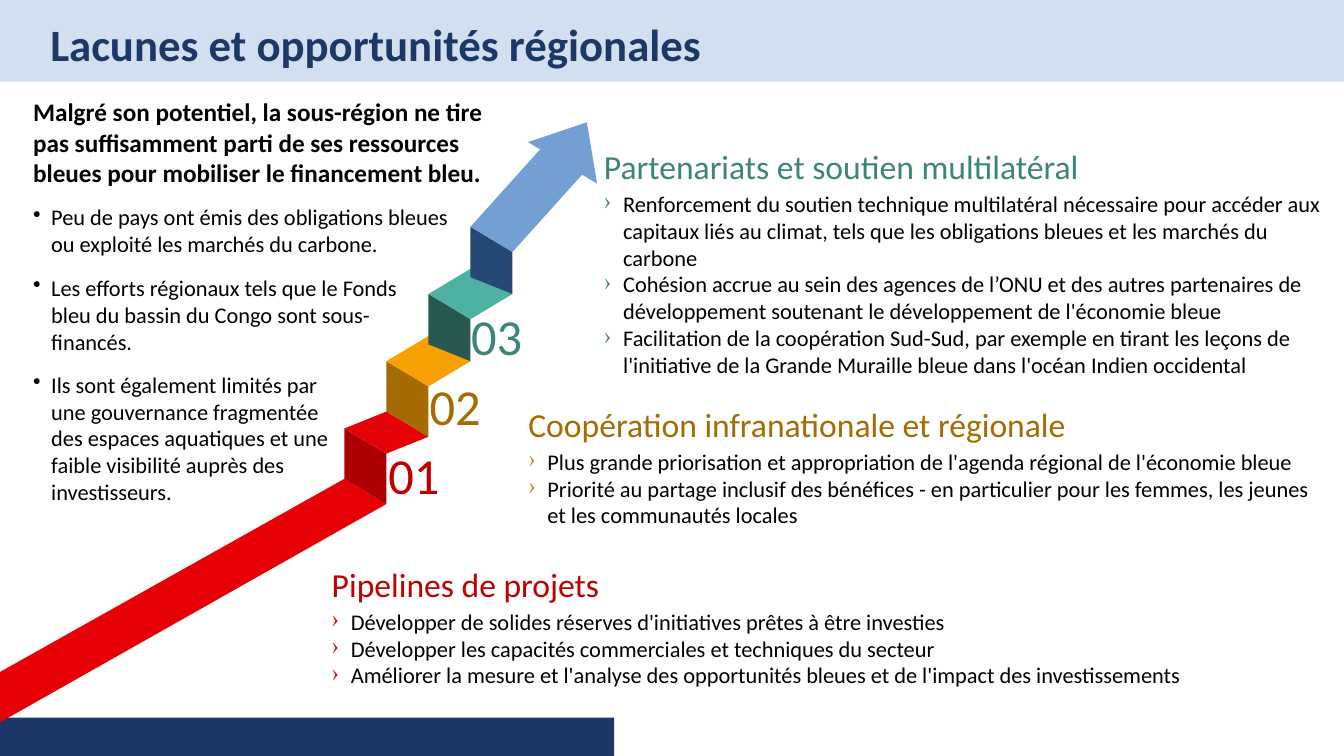
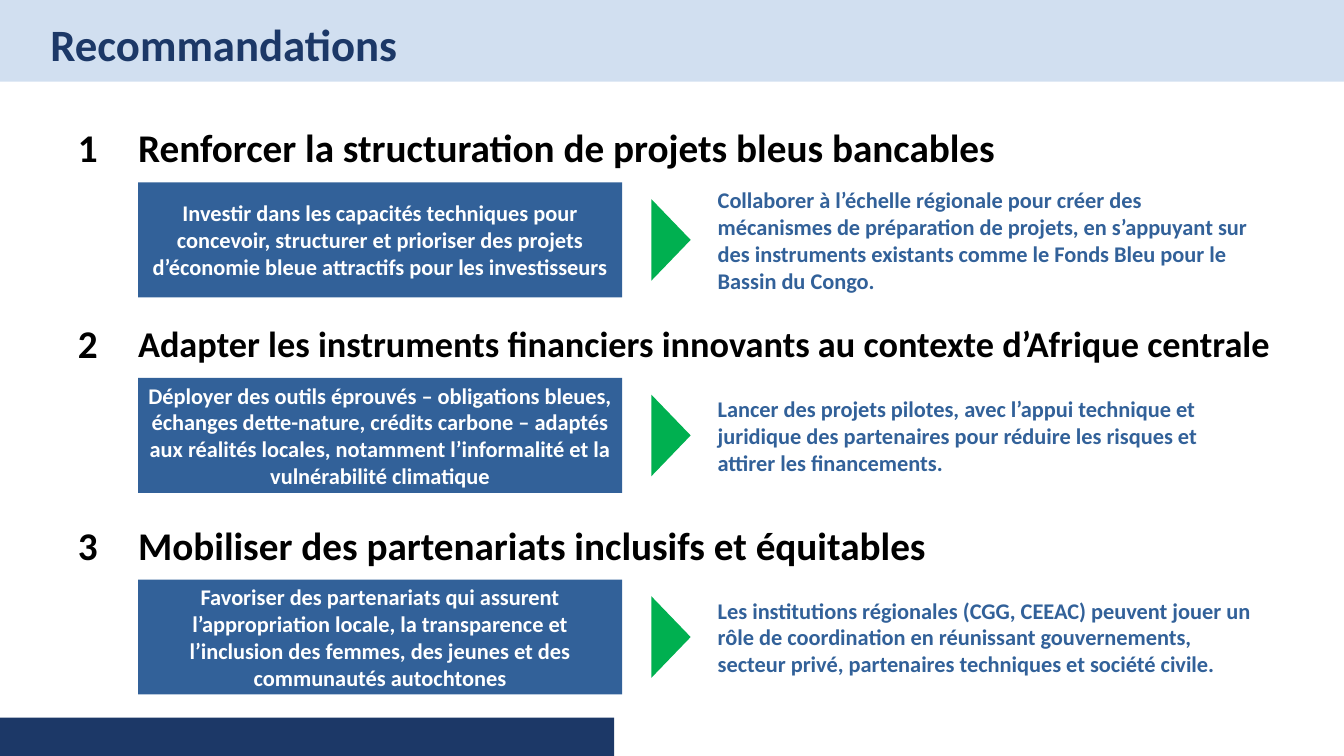
"""Build two slides on regional gaps, opportunities and recommendations for blue finance."""
from dataclasses import dataclass, replace

from lxml import etree
from pptx import Presentation
from pptx import util as u
from pptx.dml import color as dml
from pptx.dml import fill as fills
from pptx.enum import shapes, text
from pptx.oxml import ns
from pptx.shapes import autoshape
from pptx.slide import Slide
from pptx.text import text as tx

Point = tuple[float, float]
Box = tuple[float, float, float, float]

COLUMNS, ROWS = 160, 90
WIDTH, HEIGHT = u.Inches(13.33), u.Inches(7.5)
CELL = HEIGHT / ROWS
FONT = "Calibri"
NAVY, PALE, BLACK, WHITE = "1C3867", "D1DFF0", "000000", "FFFFFF"
RED, BRICK, SKY, DEEP_BLUE = "E60106", "C00000", "749FD2", "254973"
OCHRE, TEAL, BLUE, GREEN = "A66B03", "3B8579", "326199", "00B050"
STEP_RISE: Point = (4.92, -8.28)
FIRST_STEP: Point = (41.04, 51.48)
SIDE_FACE: list[Point] = [(0, 0), (4.92, 2.88), (4.92, 8.52), (-0.12, 5.88)]
TOP_FACE: list[Point] = [(0, 0), (5.04, -2.88), (9.84, 0.12), (4.92, 3)]


@dataclass(frozen=True)
class Style:
    """How a block of text looks."""
    size: float
    color: str = BLACK
    bold: bool = False
    centred: bool = False
    middle: bool = True
    inset: bool = False
    spacing: float = 1.0
    bullet: str = ""
    bullet_color: str = BLACK
    indent: float = 0.18


@dataclass(frozen=True)
class Step:
    """One numbered step of the staircase."""
    number: str
    side: str
    top: str
    ink: str


@dataclass(frozen=True)
class Topic:
    """A coloured heading with its list of opportunities."""
    left: float
    top: float
    width: float
    list_rows: float
    ink: str
    bullet_color: str
    heading: str
    points: list[str]


@dataclass(frozen=True)
class Gap:
    """A regional gap, listed beside the staircase."""
    top: float
    width: float
    rows: float
    wording: str


@dataclass(frozen=True)
class Recommendation:
    """A numbered recommendation, its action and the way to reach it."""
    top: float
    heading: str
    action: str
    means: str
    heading_size: float = 28


TITLE = Style(32, NAVY, bold=True, inset=True, spacing=0.9)
TOPIC_LIST = Style(16, middle=False, bullet="›", indent=0.19)
INTRO = Style(18, bold=True, middle=False, inset=True)
GAP = Style(16, middle=False, inset=True, bullet="•")
HEADING = Style(28, bold=True, spacing=0.9)
ACTION = Style(16, WHITE, bold=True, centred=True, inset=True)
MEANS = Style(16, BLUE, bold=True, inset=True)

STEPS = [
    Step("01", "AD0105", RED, BRICK),
    Step("02", OCHRE, "F8A104", OCHRE),
    Step("03", "275951", "4FB1A1", TEAL),
]
TOPICS = [
    Topic(39.48, 66.6, 111.72, 10.8, BRICK, RED, "Pipelines de projets", [
        "Développer de solides réserves d'initiatives prêtes à être investies",
        "Développer les capacités commerciales et techniques du secteur",
        "Améliorer la mesure et l'analyse des opportunités bleues et de l'impact des investissements",
    ]),
    Topic(62.88, 47.55, 93.12, 10.8, OCHRE, "CD8503", "Coopération infranationale et régionale", [
        "Plus grande priorisation et appropriation de l'agenda régional de l'économie bleue",
        "Priorité au partage inclusif des bénéfices - en particulier pour les femmes, les jeunes "
        "et les communautés locales",
    ]),
    Topic(71.88, 16.86, 85.44, 21.36, TEAL, TEAL, "Partenariats et soutien multilatéral", [
        "Renforcement du soutien technique multilatéral nécessaire pour accéder aux capitaux liés "
        "au climat, tels que les obligations bleues et les marchés du carbone",
        "Cohésion accrue au sein des agences de l’ONU et des autres partenaires de développement "
        "soutenant le développement de l'économie bleue",
        "Facilitation de la coopération Sud-Sud, par exemple en tirant les leçons de l'initiative "
        "de la Grande Muraille bleue dans l'océan Indien occidental",
    ]),
]
GAPS = [
    Gap(23.64, 54.48, 7.68, "Peu de pays ont émis des obligations bleues ou exploité les marchés du carbone."),
    Gap(32.04, 47.76, 10.92, "Les efforts régionaux tels que le Fonds bleu du bassin du Congo sont sous-financés."),
    Gap(43.56, 39.84, 17.4, "Ils sont également limités par une gouvernance fragmentée des espaces aquatiques "
        "et une faible visibilité auprès des investisseurs."),
]
RECOMMENDATIONS = [
    Recommendation(
        14.04, "Renforcer la structuration de projets bleus bancables",
        "Investir dans les capacités techniques pour concevoir, structurer et prioriser des projets "
        "d’économie bleue attractifs pour les investisseurs",
        "Collaborer à l’échelle régionale pour créer des mécanismes de préparation de projets, en "
        "s’appuyant sur des instruments existants comme le Fonds Bleu pour le Bassin du Congo."),
    Recommendation(
        37.32, "Adapter les instruments financiers innovants au contexte d’Afrique centrale",
        "Déployer des outils éprouvés – obligations bleues, échanges dette-nature, crédits carbone – "
        "adaptés aux réalités locales, notamment l’informalité et la vulnérabilité climatique",
        "Lancer des projets pilotes, avec l’appui technique et juridique des partenaires pour réduire "
        "les risques et attirer les financements.", 25.9),
    Recommendation(
        61.32, "Mobiliser des partenariats inclusifs et équitables",
        "Favoriser des partenariats qui assurent l’appropriation locale, la transparence et "
        "l’inclusion des femmes, des jeunes et des communautés autochtones",
        "Les institutions régionales (CGG, CEEAC) peuvent jouer un rôle de coordination en réunissant "
        "gouvernements, secteur privé, partenaires techniques et société civile."),
]


def paint(fill: fills.FillFormat, color: str) -> None:
    """Fill with a solid hex colour."""
    fill.solid()
    fill.fore_color.rgb = dml.RGBColor.from_string(color)


def cells(box: Box) -> list[u.Emu]:
    """Turn grid columns and rows into lengths."""
    return [u.Emu(round(length * CELL)) for length in box]


def add_bullet(paragraph: tx._Paragraph, style: Style) -> None:
    """Give a paragraph a coloured bullet and a hanging indent."""
    properties = paragraph._p.get_or_add_pPr()
    indent = u.Inches(style.indent)
    properties.set("marL", str(indent))
    properties.set("indent", str(-indent))
    tint = etree.SubElement(properties, ns.qn("a:buClr"))
    etree.SubElement(tint, ns.qn("a:srgbClr"), val=style.bullet_color)
    etree.SubElement(properties, ns.qn("a:buChar"), char=style.bullet)


def write(frame: tx.TextFrame, lines: list[str], style: Style) -> None:
    """Write one paragraph per line in the given style."""
    frame.word_wrap = True
    frame.vertical_anchor = text.MSO_ANCHOR.MIDDLE if style.middle else text.MSO_ANCHOR.TOP
    frame.margin_left = frame.margin_right = u.Inches(0.1 if style.inset else 0)
    frame.margin_top = frame.margin_bottom = u.Inches(0.05 if style.inset else 0)
    for index, line in enumerate(lines):
        paragraph = frame.add_paragraph() if index else frame.paragraphs[0]
        paragraph.text = line
        paragraph.alignment = text.PP_ALIGN.CENTER if style.centred else text.PP_ALIGN.LEFT
        paragraph.line_spacing = style.spacing
        if style.bullet:
            add_bullet(paragraph, style)
        font = paragraph.font
        font.name, font.size, font.bold = FONT, u.Pt(style.size), style.bold
        paint(font.fill, style.color)


def add_text(slide: Slide, box: Box, lines: list[str], style: Style) -> None:
    """Place a text box on the grid."""
    write(slide.shapes.add_textbox(*cells(box)).text_frame, lines, style)


def finish(shape: autoshape.Shape, color: str) -> None:
    """Make a shape flat, plain and without outline."""
    shape.shadow.inherit = False
    shape.line.fill.background()
    paint(shape.fill, color)


def add_solid(slide: Slide, box: Box, color: str, rotation: float = 0,
              kind: shapes.MSO_SHAPE = shapes.MSO_SHAPE.RECTANGLE) -> autoshape.Shape:
    """Place a flat preset shape on the grid."""
    shape = slide.shapes.add_shape(kind, *cells(box))
    shape.rotation = rotation
    finish(shape, color)
    return shape


def add_face(slide: Slide, corners: list[Point], color: str, origin: Point = (0, 0)) -> None:
    """Draw a closed polygon whose corners are offsets from an origin."""
    start, *rest = [(origin[0] + x, origin[1] + y) for x, y in corners]
    outline = slide.shapes.build_freeform(*start, scale=CELL)
    outline.add_line_segments(rest, close=True)
    finish(outline.convert_to_shape(), color)


def add_page(deck: Presentation, title: str) -> Slide:
    """Add a slide with the shared bands and title."""
    slide = deck.slides.add_slide(deck.slide_layouts[6])
    add_solid(slide, (0, 0, COLUMNS, 9.72), PALE)
    add_solid(slide, (0, 85.44, 73.08, 4.56), NAVY)
    add_text(slide, (4.8, 1.8, 150.24, 7.68), [title], TITLE)
    return slide


def add_staircase(slide: Slide) -> None:
    """Draw the ramp, the numbered steps and the rising arrow."""
    add_face(slide, [(0, 80.16), (41.04, 57.24), (46.08, 59.88), (0, 86.04)], RED)
    x, y = FIRST_STEP
    for step in STEPS:
        add_face(slide, SIDE_FACE, step.side, (x, y))
        add_face(slide, TOP_FACE, step.top, (x, y))
        add_text(slide, (x + 4.22, y + 1.2, 8, 7.68), [step.number], Style(36, step.ink, centred=True))
        x, y = x + STEP_RISE[0], y + STEP_RISE[1]
    add_face(slide, SIDE_FACE, DEEP_BLUE, (x, y))
    add_face(slide, [(55.68, 26.64), (64.92, 17.28), (69.6, 20.28), (60.6, 29.52)], SKY)
    add_solid(slide, (63.6, 14.16, 9.6, 5.64), SKY, 31, shapes.MSO_SHAPE.ISOSCELES_TRIANGLE)


def add_topic(slide: Slide, topic: Topic) -> None:
    """Write a topic heading and its list."""
    add_text(slide, (topic.left, topic.top, topic.width, 5.76), [topic.heading], Style(24, topic.ink))
    add_text(slide, (topic.left, topic.top + 5.76, topic.width, topic.list_rows), topic.points,
             replace(TOPIC_LIST, bullet_color=topic.bullet_color))


def add_recommendation(slide: Slide, number: int, item: Recommendation) -> None:
    """Lay out a recommendation as heading, action, arrow and means."""
    add_text(slide, (6.36, item.top, 8.16, 7.68), [str(number)], replace(HEADING, centred=True))
    add_text(slide, (16.44, item.top, 139.92, 7.68), [item.heading], replace(HEADING, size=item.heading_size))
    detail_top = item.top + 7.68
    action = add_solid(slide, (16.44, detail_top, 57.6, 13.68), BLUE)
    write(action.text_frame, [item.action], ACTION)
    add_solid(slide, (75, detail_top + 4.5, 9.72, 4.68), GREEN, 90, shapes.MSO_SHAPE.ISOSCELES_TRIANGLE)
    add_text(slide, (84.24, detail_top, 66.84, 13.68), [item.means], MEANS)


def main() -> None:
    """Build and save the presentation."""
    deck = Presentation()
    deck.slide_width, deck.slide_height = WIDTH, HEIGHT

    opportunities = add_page(deck, "Lacunes et opportunités régionales")
    add_staircase(opportunities)
    for topic in TOPICS:
        add_topic(opportunities, topic)
    add_text(opportunities, (2.76, 10.92, 57.36, 12.12), [
        "Malgré son potentiel, la sous-région ne tire pas suffisamment parti de ses ressources bleues "
        "pour mobiliser le financement bleu."], INTRO)
    for gap in GAPS:
        add_text(opportunities, (2.76, gap.top, gap.width, gap.rows), [gap.wording], GAP)

    recommendations = add_page(deck, "Recommandations")
    for number, item in enumerate(RECOMMENDATIONS, start=1):
        add_recommendation(recommendations, number, item)

    deck.save("out.pptx")


if __name__ == "__main__":
    main()
